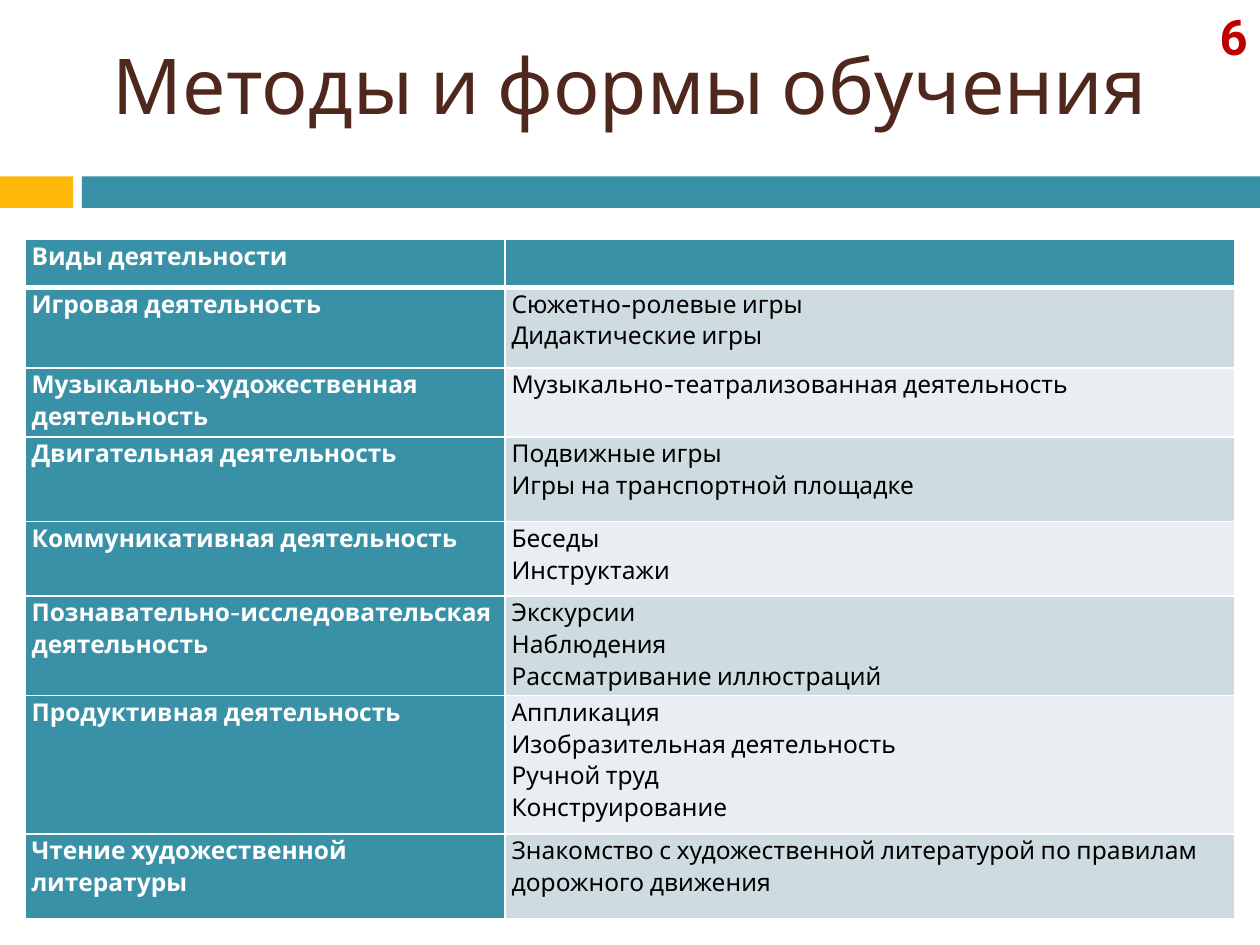
"""Build the slide on teaching methods and forms by kind of activity."""
from dataclasses import dataclass

from lxml.etree import SubElement
from pptx import Presentation
from pptx.dml.color import RGBColor
from pptx.enum.shapes import MSO_SHAPE
from pptx.enum.text import MSO_ANCHOR, PP_ALIGN
from pptx.oxml.ns import qn
from pptx.util import Inches, Pt

TEAL, GOLD, WHITE, BLACK = "3891A7", "FEB80A", "FFFFFF", "000000"
BROWN, RED = "4F271C", "C00000"
BANDS = ("CEDCE1", "E8EEF1")
COLUMNS = (3.81, 5.79)


@dataclass
class Activity:
    """One table row: its height, kind of activity and forms of work."""
    height: float
    kind: str
    forms: tuple[str, ...] = ()


@dataclass
class Style:
    """Character formatting of a run."""
    size: float
    color: str
    bold: bool = False
    font: str = "Cabin"


ACTIVITIES = (
    Activity(0.38, "Виды деятельности"),
    Activity(0.64, "Игровая деятельность", ("Сюжетно-ролевые игры", "Дидактические игры")),
    Activity(0.55, "Музыкально-художественная деятельность",
             ("Музыкально-театрализованная деятельность",)),
    Activity(0.67, "Двигательная деятельность",
             ("Подвижные игры", "Игры на транспортной площадке")),
    Activity(0.59, "Коммуникативная деятельность", ("Беседы", "Инструктажи")),
    Activity(0.79, "Познавательно-исследовательская деятельность",
             ("Экскурсии", "Наблюдения", "Рассматривание иллюстраций")),
    Activity(1.1, "Продуктивная деятельность",
             ("Аппликация", "Изобразительная деятельность", "Ручной труд", "Конструирование")),
    Activity(0.67, "Чтение художественной литературы",
             ("Знакомство с художественной литературой по правилам дорожного движения",)),
)
KIND_STYLE = Style(14, WHITE, True)
FORM_STYLE = Style(14, BLACK)


def rgb(color: str) -> RGBColor:
    return RGBColor.from_string(color)


def add_run(p, text: str, style: Style) -> None:
    r = p.add_run()
    r.text = text
    r.font.name = style.font
    r.font.size = Pt(style.size)
    r.font.bold = style.bold
    r.font.color.rgb = rgb(style.color)


def add_bar(s, left: float, width: float, color: str) -> None:
    sp = s.shapes.add_shape(MSO_SHAPE.RECTANGLE, Inches(left), Inches(1.4),
                            Inches(width), Inches(0.25))
    sp.shadow.inherit = False
    sp.fill.solid()
    sp.fill.fore_color.rgb = rgb(color)
    sp.line.fill.background()


def set_borders(cell, top: float, bottom: float) -> None:
    tc_pr = cell._tc.get_or_add_tcPr()
    for side, width in (("L", 1), ("R", 1), ("T", top), ("B", bottom)):
        ln = SubElement(tc_pr, qn(f"a:ln{side}"), w=str(Pt(width)))
        fill = SubElement(ln, qn("a:solidFill"))
        SubElement(fill, qn("a:srgbClr"), val=WHITE)


def fill_cell(cell, lines: tuple[str, ...], style: Style, color: str, row: int) -> None:
    cell.margin_left = cell.margin_right = Inches(0.05)
    cell.margin_top = cell.margin_bottom = 0
    set_borders(cell, 3 if row == 1 else 1, 3 if row == 0 else 1)
    cell.fill.solid()
    cell.fill.fore_color.rgb = rgb(color)
    tf = cell.text_frame
    for i, line in enumerate(lines):
        p = tf.add_paragraph() if i else tf.paragraphs[0]
        p.line_spacing = 1.07
        add_run(p, line, style)
    if not lines:
        tf.paragraphs[0].font.size = Pt(style.size)


def add_activity_table(s) -> None:
    height = sum(a.height for a in ACTIVITIES)
    table = s.shapes.add_table(len(ACTIVITIES), len(COLUMNS), Inches(0.2), Inches(1.9),
                               Inches(sum(COLUMNS)), Inches(height)).table
    for column, width in zip(table.columns, COLUMNS):
        column.width = Inches(width)
    for i, activity in enumerate(ACTIVITIES):
        table.rows[i].height = Inches(activity.height)
        band = BANDS[(i - 1) % 2] if i else TEAL
        fill_cell(table.cell(i, 0), (activity.kind,), KIND_STYLE, TEAL, i)
        fill_cell(table.cell(i, 1), activity.forms, FORM_STYLE, band, i)


def add_title(s) -> None:
    sp = s.shapes.title
    sp.left, sp.top, sp.width, sp.height = 0, 0, Inches(10), Inches(1.33)
    tf = sp.text_frame
    tf.vertical_anchor = MSO_ANCHOR.MIDDLE
    p = tf.paragraphs[0]
    p.alignment = PP_ALIGN.CENTER
    add_run(p, "Методы и формы обучения", Style(44, BROWN))


def add_page_number(s) -> None:
    tf = s.shapes.add_textbox(Inches(9.57), 0, Inches(0.43), Inches(0.57)).text_frame
    tf.word_wrap = True
    p = tf.paragraphs[0]
    p.alignment = PP_ALIGN.RIGHT
    add_run(p, "6", Style(28, RED, True, "Roboto"))


def main() -> None:
    prs = Presentation()
    prs.slide_width, prs.slide_height = Inches(10), Inches(7.5)
    s = prs.slides.add_slide(prs.slide_layouts[5])
    add_bar(s, 0, 0.58, GOLD)
    add_bar(s, 0.65, 9.35, TEAL)
    add_title(s)
    add_activity_table(s)
    add_page_number(s)
    prs.save("out.pptx")


if __name__ == "__main__":
    main()
